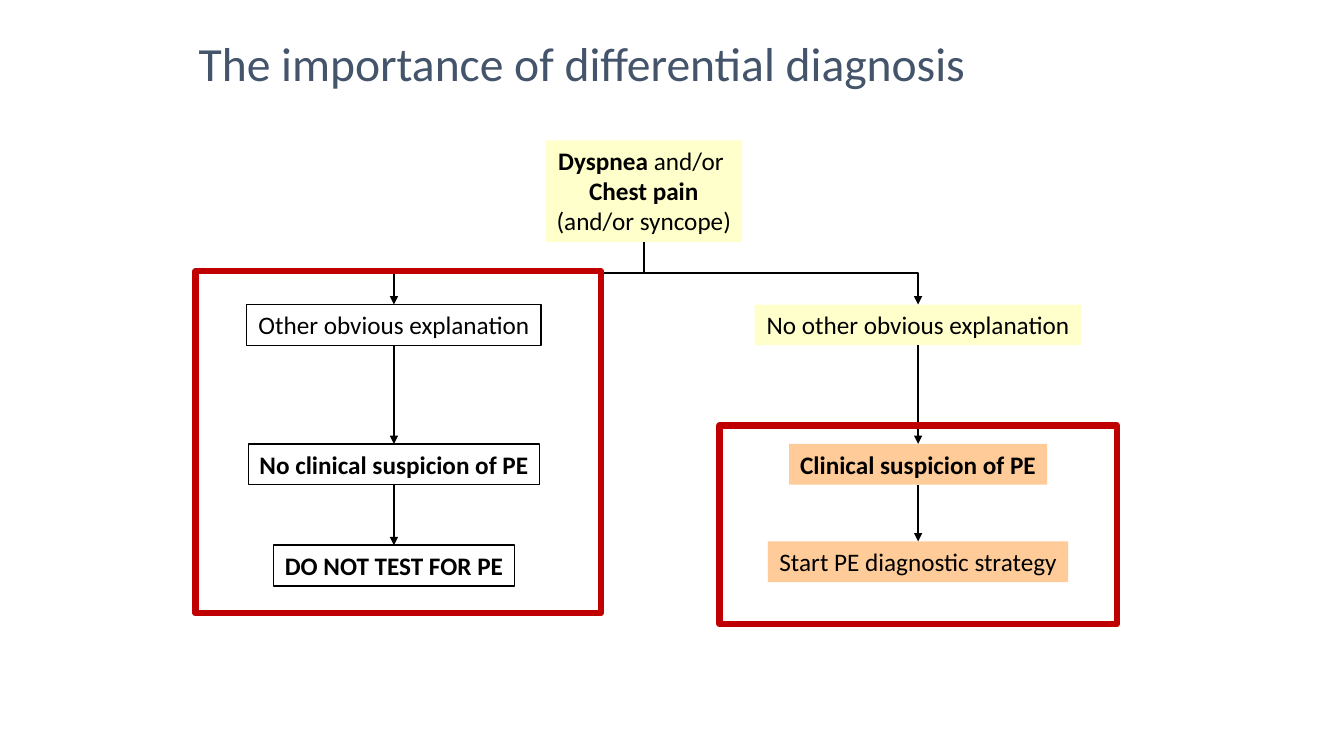
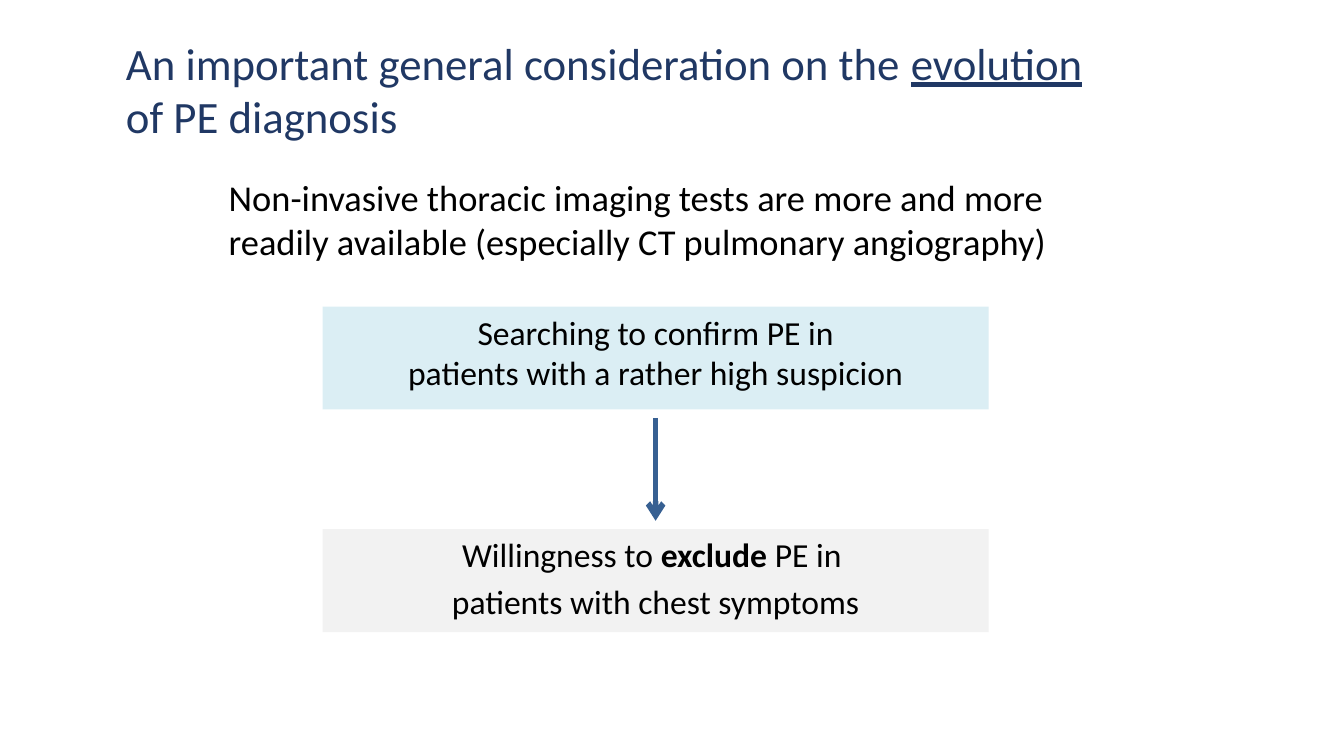
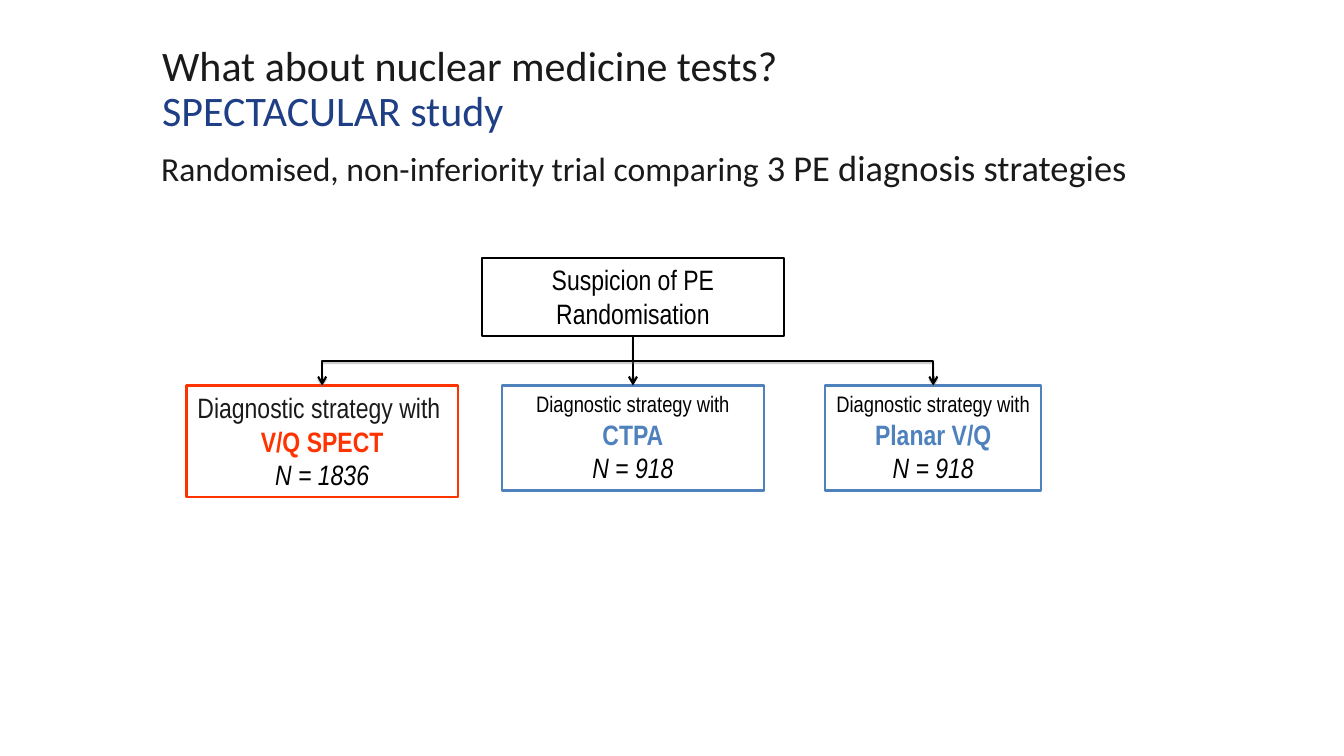
"""Three slides on pulmonary embolism diagnosis, laid out on a 32 by 18 grid."""
from dataclasses import dataclass
from typing import Any, NamedTuple

import lxml.etree
import pptx
import pptx.dml.color
import pptx.enum.shapes
import pptx.enum.text
import pptx.oxml.ns
import pptx.util

WIDE, HIGH = 13.33, 7.5
COLS, ROWS = 32, 18
FACE, SLIM = "Calibri", "Arial Narrow"
HUES = {
    "black": "000000", "white": "FFFFFF", "ink": "1A1A1A", "slate": "44546A",
    "navy": "203864", "royal": "1E3E85", "steel": "376092", "blue": "4F81BD",
    "sky": "DBEEF4", "grey": "F2F2F2", "cream": "FFFFCC", "peach": "FFCC99",
    "red": "C00000", "flame": "FF3300", "shade": "808080",
}
ALIGN = pptx.enum.text.PP_ALIGN
ANCHOR = pptx.enum.text.MSO_ANCHOR
LINK = pptx.enum.shapes.MSO_CONNECTOR


class Bit(NamedTuple):
    text: str
    size: float = 18
    hue: str = "black"
    bold: bool = False
    slant: bool = False
    under: bool = False


@dataclass(frozen=True)
class Box:
    mid: float
    top: float
    wide: float
    high: float
    lines: tuple[tuple[Bit, ...], ...] = ()
    fill: str = ""
    edge: str = ""
    weight: float = 1
    face: str = FACE
    space: float = 0
    lead: float = 1

    @property
    def left(self) -> float:
        return self.mid - self.wide / 2

    @property
    def base(self) -> float:
        return self.top + self.high


def across(cols: float) -> int:
    return pptx.util.Inches(WIDE * cols / COLS)


def down(rows: float) -> int:
    return pptx.util.Inches(HIGH * rows / ROWS)


def place(box: Box) -> tuple[int, int, int, int]:
    return across(box.left), down(box.top), across(box.wide), down(box.high)


def tint(name: str) -> pptx.dml.color.RGBColor:
    return pptx.dml.color.RGBColor.from_string(HUES[name])


def write(frame: Any, box: Box, align: Any, anchor: Any, wrap: bool) -> None:
    frame.auto_size = pptx.enum.text.MSO_AUTO_SIZE.NONE
    frame.word_wrap = wrap
    frame.vertical_anchor = anchor
    for i, line in enumerate(box.lines):
        para = frame.add_paragraph() if i else frame.paragraphs[0]
        para.alignment = align
        para.line_spacing = box.lead
        if i and box.space:
            para.space_before = pptx.util.Pt(box.space)
        for bit in line:
            run = para.add_run()
            run.text = bit.text
            font = run.font
            font.name, font.size = box.face, pptx.util.Pt(bit.size)
            font.bold, font.italic, font.underline = bit.bold, bit.slant, bit.under
            font.color.rgb = tint(bit.hue)


def start(deck: Any, box: Box, anchor: Any = ANCHOR.MIDDLE) -> Any:
    slide = deck.slides.add_slide(deck.slide_layouts[5])
    title = slide.shapes.title
    title.left, title.top, title.width, title.height = place(box)
    write(title.text_frame, box, ALIGN.LEFT, anchor, True)
    return slide


def note(slide: Any, box: Box) -> None:
    shape = slide.shapes.add_textbox(*place(box))
    write(shape.text_frame, box, ALIGN.LEFT, ANCHOR.TOP, True)


def draw(slide: Any, *boxes: Box) -> None:
    for box in boxes:
        shape = slide.shapes.add_shape(pptx.enum.shapes.MSO_SHAPE.RECTANGLE, *place(box))
        shape.shadow.inherit = False
        if box.fill:
            shape.fill.solid()
            shape.fill.fore_color.rgb = tint(box.fill)
        else:
            shape.fill.background()
        if box.edge:
            shape.line.color.rgb = tint(box.edge)
            shape.line.width = pptx.util.Pt(box.weight)
        else:
            shape.line.fill.background()
        write(shape.text_frame, box, ALIGN.CENTER, ANCHOR.TOP, False)


def child(node: Any, tag: str, **attrs: str) -> Any:
    return lxml.etree.SubElement(node, pptx.oxml.ns.qn(tag), attrs)


def join(slide: Any, above: Box, below: Box, head: str = "triangle", hue: str = "black",
         weight: float = 1.5, gap: float = 0, shade: bool = False) -> None:
    x1, y1 = across(above.mid), down(above.base + gap)
    x2, y2 = across(below.mid), down(below.top - gap)
    if x1 == x2:
        arrow = slide.shapes.add_connector(LINK.STRAIGHT, x1, y1, x2, y2)
    else:
        drop, span = y2 - y1, abs(x2 - x1)
        left, top = (x1 + x2 - drop) // 2, (y1 + y2 - span) // 2
        near, far = (left, left + drop) if x2 < x1 else (left + drop, left)
        arrow = slide.shapes.add_connector(LINK.ELBOW, near, top, far, top + span)
        turn = 90 if x2 < x1 else 270
        arrow.element.spPr.xfrm.set("rot", str(turn * 60000))
    arrow.line.color.rgb = tint(hue)
    arrow.line.width = pptx.util.Pt(weight)
    child(arrow.line._get_or_add_ln(), "a:tailEnd", type=head)
    effect = child(arrow.element.spPr, "a:effectLst")
    if shade:
        cast = child(effect, "a:outerShdw", blurRad="0", dist=str(pptx.util.Pt(1.6)),
                     dir="5400000", rotWithShape="0")
        child(child(cast, "a:srgbClr", val=HUES["shade"]), "a:alpha", val="38000")


def sort(deck: Any) -> None:
    slide = start(deck, Box(15.29, 0.07, 21.6, 3, (
        (Bit("The importance of differential diagnosis", 34, "slate"),),), lead=0.9))
    west, east, tall = 9.38, 21.86, 0.97
    root = Box(15.33, 3.34, 4.68, 2.42, (
        (Bit("Dyspnea ", bold=True), Bit("and/or ")),
        (Bit("Chest pain", bold=True),),
        (Bit("(and/or syncope)"),)), "cream")

    def step(mid: float, top: float, wide: float, text: str, bold: bool,
             fill: str = "", edge: str = "") -> Box:
        return Box(mid, top, wide, tall, ((Bit(text, bold=bold),),), fill, edge)

    other = (
        step(west, 7.25, 7.01, "Other obvious explanation", False, edge="black"),
        step(west, 10.57, 6.94, "No clinical suspicion of PE", True, "white", "black"),
        step(west, 12.98, 5.74, "DO NOT TEST FOR PE", True, "white", "black"),
    )
    work = (
        step(east, 7.25, 7.78, "No other obvious explanation", False, "cream"),
        step(east, 10.57, 6.14, "Clinical suspicion of PE", True, "peach"),
        step(east, 12.89, 7.15, "Start PE diagnostic strategy", False, "peach"),
    )
    draw(slide, root, *other, *work)
    for chain in (other, work):
        for above, below in zip((root, *chain), chain):
            join(slide, above, below)
    draw(slide, Box(9.48, 6.46, 9.65, 8.14, edge="red", weight=4.5),
         Box(east, 10.13, 9.46, 4.73, edge="red", weight=4.5))


def shift(deck: Any) -> None:
    slide = start(deck, Box(14.95, 0.72, 24.38, 2.83, ((
        Bit("An important general consideration on the ", 32, "navy"),
        Bit("evolution", 32, "navy", under=True),
        Bit(" of PE diagnosis", 32, "navy")),)), ANCHOR.TOP)
    note(slide, Box(16.01, 4.06, 21.6, 2.71, ((Bit(
        "Non-invasive thoracic imaging tests are more and more readily available "
        "(especially CT pulmonary angiography)", 26),),)))
    mid, wide, high = 15.61, 15.86, 2.45
    past = Box(mid, 7.3, wide, high, (
        (Bit("Searching to confirm PE in", 24),),
        (Bit("patients with a rather high suspicion", 24),)), "sky")
    now = Box(mid, 12.6, wide, high, (
        (Bit("Willingness to ", 24), Bit("exclude", 24, bold=True), Bit(" PE in ", 24)),
        (Bit("patients with chest symptoms", 24),)), "grey", space=4.8)
    draw(slide, past, now)
    join(slide, past, now, "arrow", "steel", 4, 0.2)


def trial(deck: Any) -> None:
    slide = start(deck, Box(13.52, 0.84, 19.8, 2.64, ((
        Bit("What about nuclear medicine tests? ", 30, "ink"),
        Bit("SPECTACULAR study", 30, "royal")),), lead=0.9))
    note(slide, Box(16.09, 3.46, 24.98, 2.52, ((
        Bit("Randomised, non-inferiority trial comparing ", 24, "ink"),
        Bit("3 PE diagnosis strategies", 26, "ink")),), lead=0.9))
    root = Box(15.07, 6.14, 7.18, 1.87, (
        (Bit("Suspicion of PE", 20),), (Bit("Randomisation", 20),)),
        edge="black", weight=1.5, face=SLIM)

    def arm(mid: float, wide: float, high: float, lead: Bit, name: str,
            count: int, hue: str) -> Box:
        return Box(mid, 9.18, wide, high, (
            (lead,), (Bit(name, 20, hue, bold=True),),
            (Bit(f"N = {count}", 20, slant=True),)),
            edge=hue, weight=1.5, face=SLIM)

    small = Bit("Diagnostic strategy with", 16)
    large = Bit("Diagnostic strategy with ", 20, "ink")
    arms = (
        arm(7.67, 6.46, 2.66, large, "V/Q SPECT", 1836, "flame"),
        arm(15.07, 6.24, 2.5, small, "CTPA", 918, "blue"),
        arm(22.22, 5.14, 2.5, small, "Planar V/Q", 918, "blue"),
    )
    draw(slide, root, *arms)
    for goal in arms:
        join(slide, root, goal, "arrow", shade=goal.mid != root.mid)


def main() -> None:
    deck = pptx.Presentation()
    deck.slide_width, deck.slide_height = across(COLS), down(ROWS)
    for build in (sort, shift, trial):
        build(deck)
    deck.save("out.pptx")


if __name__ == "__main__":
    main()
